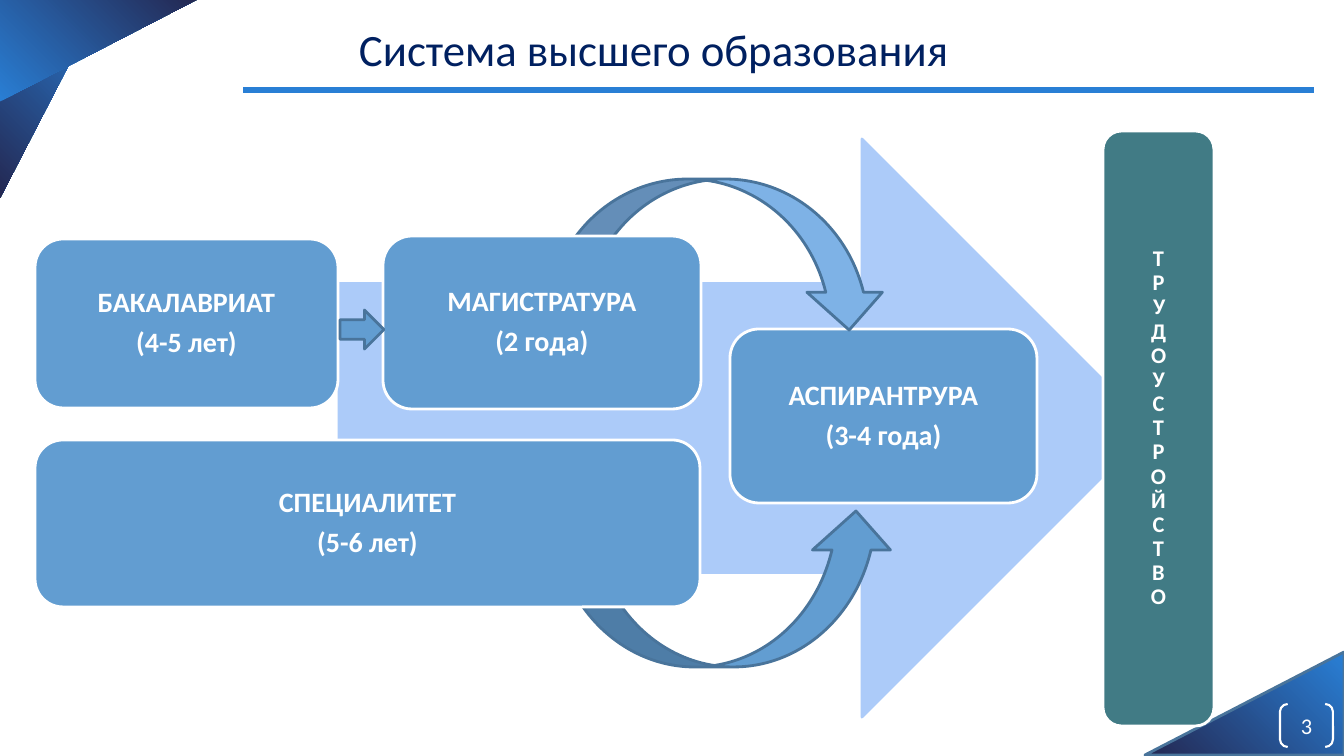
from dataclasses import dataclass

from lxml import etree
from pptx import Presentation
from pptx import util as u
from pptx.dml.color import RGBColor
from pptx.enum import shapes, text
from pptx.oxml.ns import qn

PX = 914400 / 100.8
FONT = "Calibri"
WHITE, NAVY, BRIGHT, DARK = "FFFFFF", "002060", "297FD5", "242852"
BLUE, EDGE, PALE, SKY, TEAL = "629DD1", "49749B", "ACCBF9", "7EB2E6", "417B85"
KIND = shapes.MSO_SHAPE


def px(n: int) -> int:
    return round(n * PX)


def color(value: str) -> RGBColor:
    return RGBColor.from_string(value)


@dataclass
class Corner:
    left: int
    top: int
    rotation: int
    flip: bool = False
    edge: str = ""


@dataclass
class Block:
    kind: int
    box: tuple[int, int, int, int]
    fill: str
    line: str
    lines: tuple[str, ...] = ()
    size: int = 20
    vertical: bool = False


CORNERS = [
    Corner(1193, 604, 270, edge=EDGE),
    Corner(0, -1, 180, flip=True),
    Corner(47, -49, 90),
]

# Back to front
BLOCKS = [
    Block(KIND.RIGHT_ARROW, (339, 139, 812, 578), PALE, PALE),
    Block(KIND.CURVED_UP_ARROW, (553, 511, 342, 156), BLUE, EDGE),
    Block(KIND.ROUNDED_RECTANGLE, (730, 329, 307, 174), BLUE, WHITE,
          ("АСПИРАНТРУРА", "(3-4 года)")),
    Block(KIND.ROUNDED_RECTANGLE, (35, 440, 665, 167), BLUE, WHITE,
          ("СПЕЦИАЛИТЕТ", "(5-6 лет)")),
    Block(KIND.ROUNDED_RECTANGLE, (35, 239, 303, 169), BLUE, WHITE,
          ("БАКАЛАВРИАТ", "(4-5 лет)")),
    Block(KIND.ROUNDED_RECTANGLE, (1103, 131, 111, 595), TEAL, WHITE,
          ("ТРУДОУСТРОЙСТВО",), 16, True),
    Block(KIND.CURVED_DOWN_ARROW, (545, 179, 342, 151), SKY, EDGE),
    Block(KIND.ROUNDED_RECTANGLE, (383, 236, 318, 173), BLUE, WHITE,
          ("МАГИСТРАТУРА", "(2 года)")),
    Block(KIND.RIGHT_ARROW, (340, 310, 44, 39), BLUE, EDGE),
]


def add_shape(slide, kind, box, line="", width=2.0):
    sp = slide.shapes.add_shape(kind, *map(px, box))
    sp.shadow.inherit = False
    if line:
        sp.line.color.rgb = color(line)
        sp.line.width = u.Pt(width)
    else:
        sp.line.fill.background()
    return sp


def write(tf, lines, size, ink, bold=False, inset=(0, 0), **paragraph_format) -> None:
    side, end = map(px, inset)
    frame_format = {
        "word_wrap": True, "vertical_anchor": text.MSO_ANCHOR.MIDDLE,
        "margin_left": side, "margin_right": side,
        "margin_top": end, "margin_bottom": end,
    }
    for name, value in frame_format.items():
        setattr(tf, name, value)
    for i, line in enumerate(lines):
        p = tf.paragraphs[0] if i == 0 else tf.add_paragraph()
        p.alignment = text.PP_ALIGN.CENTER
        for name, value in paragraph_format.items():
            setattr(p, name, value)
        r = p.add_run()
        r.text = line
        for name, value in {"name": FONT, "size": u.Pt(size), "bold": bold}.items():
            setattr(r.font, name, value)
        r.font.color.rgb = color(ink)


def draw_corner(slide, corner: Corner) -> None:
    sp = add_shape(slide, KIND.RIGHT_TRIANGLE, (corner.left, corner.top, 103, 199),
                   corner.edge)
    sp.rotation = corner.rotation
    if corner.flip:
        sp.element.spPr.find(qn("a:xfrm")).set("flipH", "1")
    sp.fill.gradient()
    sp.fill.gradient_angle = 135
    for stop, value in zip(sp.fill.gradient_stops, (BRIGHT, DARK)):
        stop.color.rgb = color(value)


def draw_block(slide, block: Block) -> None:
    sp = add_shape(slide, block.kind, block.box, block.line)
    sp.fill.solid()
    sp.fill.fore_color.rgb = color(block.fill)
    if block.lines:
        write(sp.text_frame, block.lines, block.size, WHITE, True, (7, 4),
              line_spacing=0.9, space_after=u.Pt(0.35 * block.size))
    if block.vertical:
        sp.element.txBody.find(qn("a:bodyPr")).set("vert", "wordArtVert")


def main() -> None:
    prs = Presentation()
    prs.slide_width, prs.slide_height = px(1344), px(756)
    slide = prs.slides.add_slide(prs.slide_layouts[5])

    # Corner decoration and title rule
    for corner in CORNERS:
        draw_corner(slide, corner)
    rule = slide.shapes.add_connector(shapes.MSO_CONNECTOR.STRAIGHT,
                                      *map(px, (1314, 90, 243, 90)))
    rule.line.color.rgb = color(BRIGHT)
    rule.line.width = u.Pt(3.75)
    etree.SubElement(rule.element.spPr, qn("a:effectLst"))

    # Page number
    number = add_shape(slide, KIND.DOUBLE_BRACKET, (1280, 704, 53, 43), WHITE, 1.5)
    number.adjustments[0] = 0.18
    number.fill.background()
    write(number.text_frame, ["3"], 16, WHITE)

    # Title
    title = slide.shapes.title
    for name, value in zip(("left", "top", "width", "height"), (207, 17, 894, 65)):
        setattr(title, name, px(value))
    write(title.text_frame, ["Система высшего образования"], 32, NAVY, inset=(10, 5))
    title.text_frame.vertical_anchor = text.MSO_ANCHOR.TOP

    # Education levels and the paths between them
    for block in BLOCKS:
        draw_block(slide, block)

    prs.save("out.pptx")


if __name__ == "__main__":
    main()
